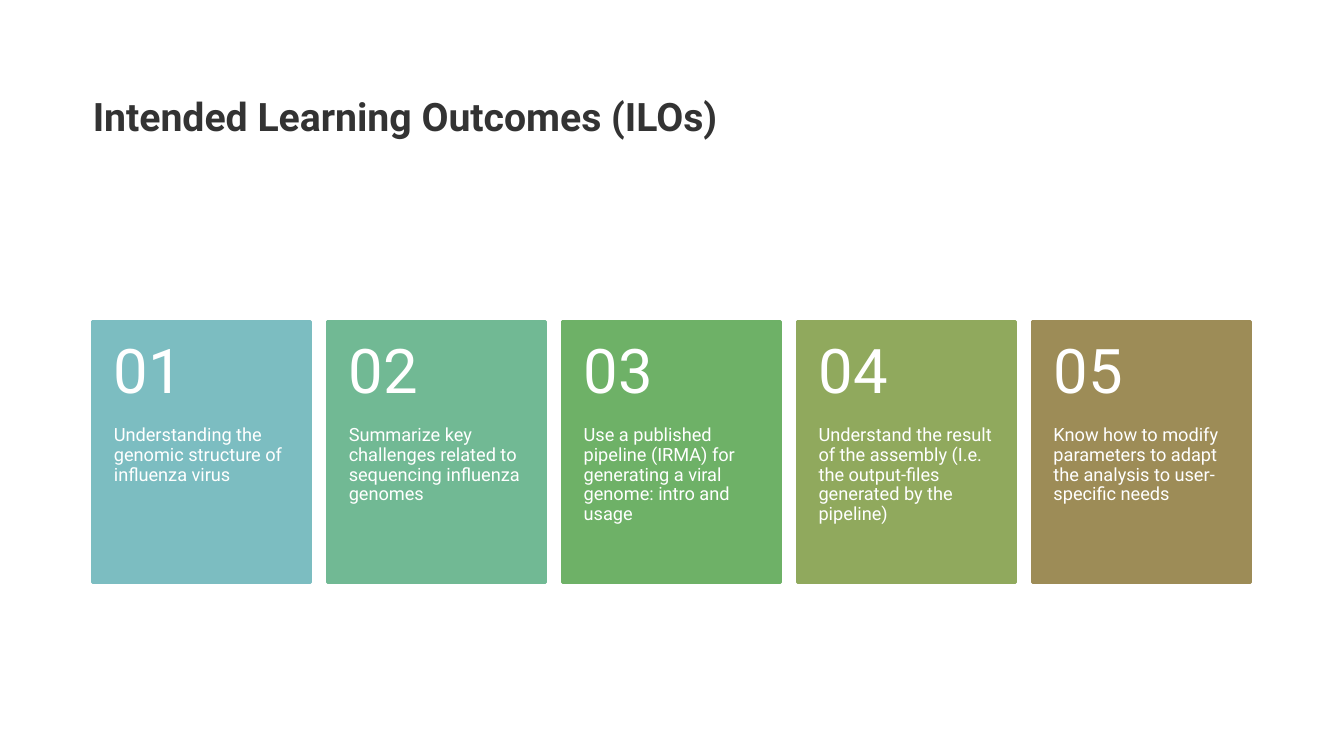
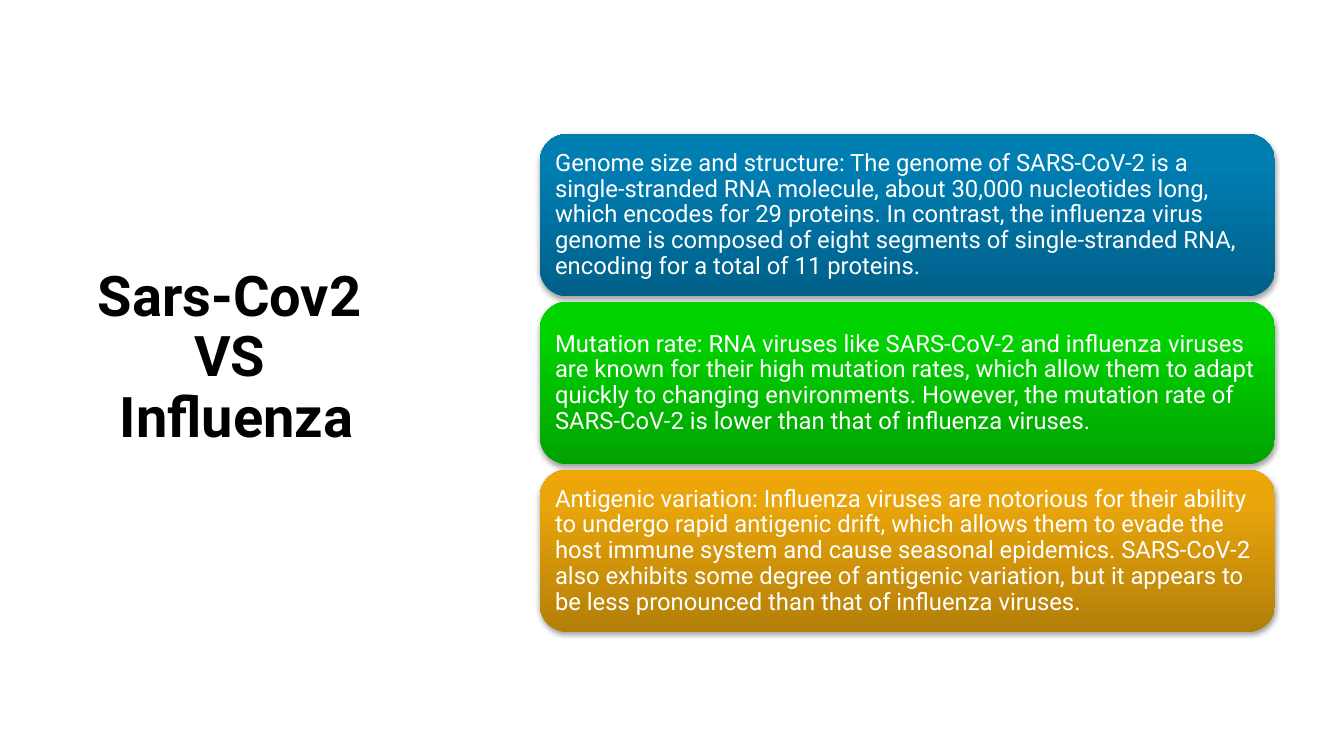
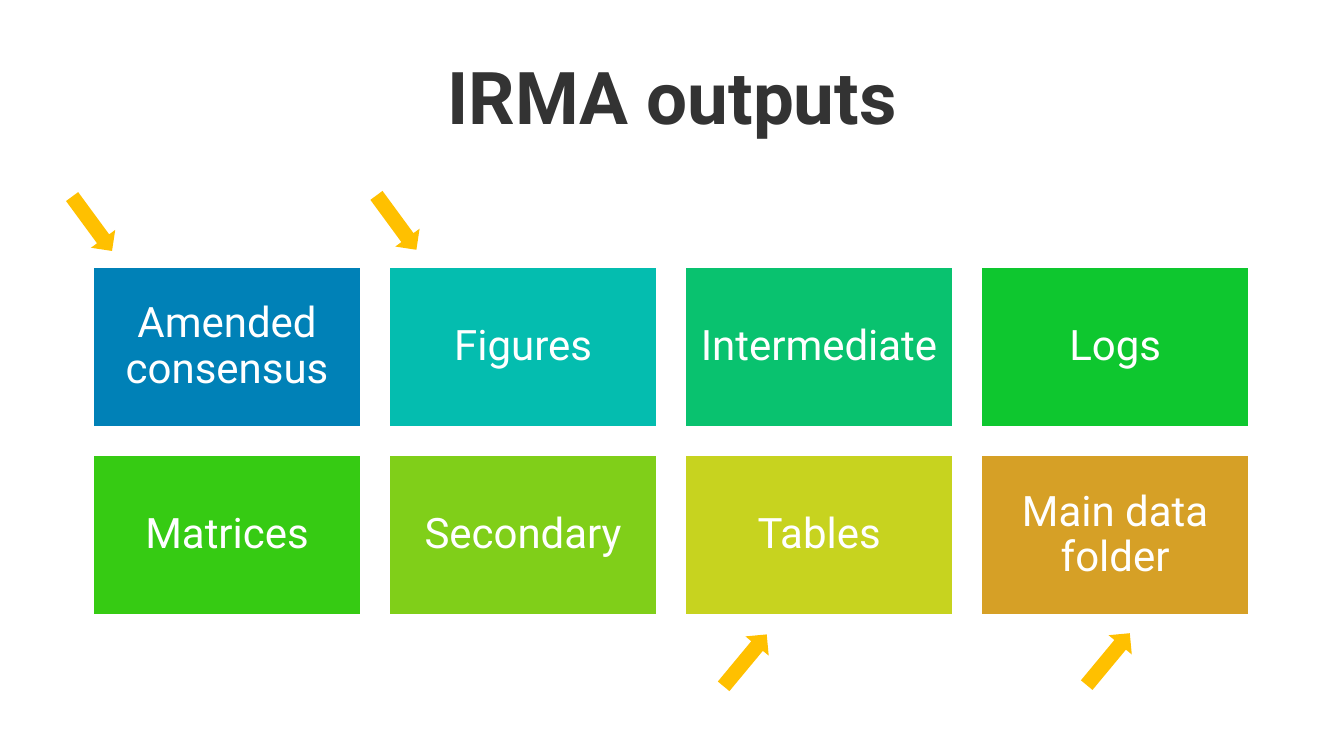
from pptx import Presentation
from pptx.dml.color import RGBColor
from pptx.enum.shapes import MSO_SHAPE
from pptx.enum.text import MSO_ANCHOR, PP_ALIGN
from pptx.oxml import parse_xml
from pptx.oxml.ns import nsdecls
from pptx.util import Cm, Pt

RECT = MSO_SHAPE.RECTANGLE
ROUND = MSO_SHAPE.ROUNDED_RECTANGLE
ARROW = MSO_SHAPE.RIGHT_ARROW
TOP, MID, LOW = MSO_ANCHOR.TOP, MSO_ANCHOR.MIDDLE, MSO_ANCHOR.BOTTOM
LEFT, MIDST = PP_ALIGN.LEFT, PP_ALIGN.CENTER

# Shared style
FONT = "Roboto"
WHITE, BLACK, DARK, GOLD = "FFFFFF", "000000", "333333", "FFC000"
EDGE = 2.34

# Slide content
CARDS = [
    ("7CBDC1", "Understanding the genomic structure of influenza virus"),
    ("71B994", "Summarize key challenges related to sequencing influenza genomes"),
    ("6EB167", "Use a published pipeline (IRMA) for generating a viral genome: "
               "intro and usage"),
    ("90A95D", "Understand the result of the assembly (I.e. the output-files "
               "generated by the pipeline)"),
    ("9D8C57", "Know how to modify parameters to adapt the analysis to "
               "user-specific needs"),
]
FACTS = [
    (("006089", "007DB1", "007EB2"),
     "Genome size and structure: The genome of SARS-CoV-2 is a single-stranded "
     "RNA molecule, about 30,000 nucleotides long, which encodes for 29 proteins. "
     "In contrast, the influenza virus genome is composed of eight segments of "
     "single-stranded RNA, encoding for a total of 11 proteins."),
    (("01A200", "01D300", "01D400"),
     "Mutation rate: RNA viruses like SARS-CoV-2 and influenza viruses are known "
     "for their high mutation rates, which allow them to adapt quickly to changing "
     "environments. However, the mutation rate of SARS-CoV-2 is lower than that of "
     "influenza viruses."),
    (("B37F09", "E9A50B", "EEA707"),
     "Antigenic variation: Influenza viruses are notorious for their ability to "
     "undergo rapid antigenic drift, which allows them to evade the host immune "
     "system and cause seasonal epidemics. SARS-CoV-2 also exhibits some degree of "
     "antigenic variation, but it appears to be less pronounced than that of "
     "influenza viruses."),
]
TILES = [
    ("0081B7", "Amended consensus"), ("04BDAF", "Figures"),
    ("09C26F", "Intermediate"), ("0EC72F", "Logs"),
    ("36CB13", "Matrices"), ("80CF19", "Secondary"),
    ("C7D31F", "Tables"), ("D6A026", "Main data folder"),
]
ARROWS = [(1.47, 5.26, 53.7), (9.14, 5.23, 53.7),
          (17.93, 16.26, 309.7), (27.08, 16.23, 309.7)]


def color(code):
    return RGBColor.from_string(code)


def write(shape, text, size, ink=WHITE, bold=False, align=LEFT, anchor=MID,
          pads=(0, 0, 0, 0)):
    """Fill a shape with one paragraph; pads run left, top, right, bottom."""
    frame = shape.text_frame
    frame.word_wrap = True
    frame.vertical_anchor = anchor
    (frame.margin_left, frame.margin_top,
     frame.margin_right, frame.margin_bottom) = map(Cm, pads)
    para = frame.paragraphs[0]
    para.alignment = align
    para.line_spacing = 0.9
    for row, line in enumerate(text.split("\n")):
        if row:
            para.add_line_break()
        run = para.add_run()
        run.text = line
        font = run.font
        font.name, font.size, font.bold = FONT, Pt(size), bold
        font.color.rgb = color(ink)


def label(slide, box, text, size, **style):
    write(slide.shapes.add_textbox(*map(Cm, box)), text, size, **style)


def title(slide, box, text, size, ink=DARK, **style):
    label(slide, box, text, size, ink=ink, bold=True, **style)


def block(slide, kind, box, fill=None, line=None):
    shape = slide.shapes.add_shape(kind, *map(Cm, box))
    shape.shadow.inherit = False
    if fill:
        shape.fill.solid()
        shape.fill.fore_color.rgb = color(fill)
    if line:
        shape.line.color.rgb = color(line)
        shape.line.width = Pt(2)
    else:
        shape.line.fill.background()
    return shape


def shade(shape, tones):
    """Upward gradient with a soft shadow below."""
    stops = "".join(
        f'<a:gs pos="{pos}"><a:srgbClr val="{tone}"/></a:gs>'
        for pos, tone in zip((0, 80000, 100000), tones))
    props = shape.element.spPr
    props.insert(2, parse_xml(
        f'<a:gradFill {nsdecls("a")} rotWithShape="1"><a:gsLst>{stops}</a:gsLst>'
        '<a:lin ang="16200000" scaled="0"/></a:gradFill>'))
    props.find("{*}effectLst").append(parse_xml(
        f'<a:outerShdw {nsdecls("a")} blurRad="{Pt(3.1)}" dist="{Pt(1.8)}" '
        'dir="5400000" rotWithShape="0"><a:srgbClr val="000000">'
        '<a:alpha val="35000"/></a:srgbClr></a:outerShdw>'))


def goals(slide):
    title(slide, (EDGE, 0.71, 29.18, 2.82), "Intended Learning Outcomes (ILOs)",
          28, anchor=LOW)
    top, wide, head = 8.1, 5.49, 2.64
    for num, (fill, text) in enumerate(CARDS):
        left = EDGE + num * 5.92
        card = block(slide, RECT, (left, top, wide, 6.58), fill, fill)
        write(card, text, 13, anchor=TOP, pads=(0.53, head, 0.53, 0.91))
        label(slide, (left, top, wide, head), f"{num + 1:02}", 44,
              pads=(0.53, 0.46, 0.53, 0.46))


def versus(slide):
    title(slide, (1.63, 4.67, 8.66, 6.65), "Sars-Cov2 \nVS \nInfluenza", 40,
          ink=BLACK, align=MIDST, anchor=LOW)
    for row, (tones, text) in enumerate(FACTS):
        fact = block(slide, ROUND, (13.61, 3.38 + row * 4.23, 18.52, 4.09))
        shade(fact, tones)
        write(fact, text, 17, pads=(0.18,) * 4)


def outputs(slide):
    title(slide, (EDGE, 1.55, 29.21, 3.15), "IRMA outputs", 52,
          align=MIDST, anchor=TOP)
    for num, (fill, text) in enumerate(TILES):
        row, col = divmod(num, 4)
        box = (EDGE + col * 7.46, 6.71 + row * 4.75, 6.77, 4.06)
        write(block(slide, RECT, box, fill, WHITE), text, 30,
              align=MIDST, pads=(0.3,) * 4)
    for left, top, turn in ARROWS:
        block(slide, ARROW, (left, top, 1.7, 0.76), GOLD).rotation = turn


def main():
    deck = Presentation()
    deck.slide_width, deck.slide_height = Cm(33.87), Cm(19.05)
    blank = deck.slide_layouts[6]
    for build in (goals, versus, outputs):
        build(deck.slides.add_slide(blank))
    deck.save("out.pptx")


if __name__ == "__main__":
    main()
